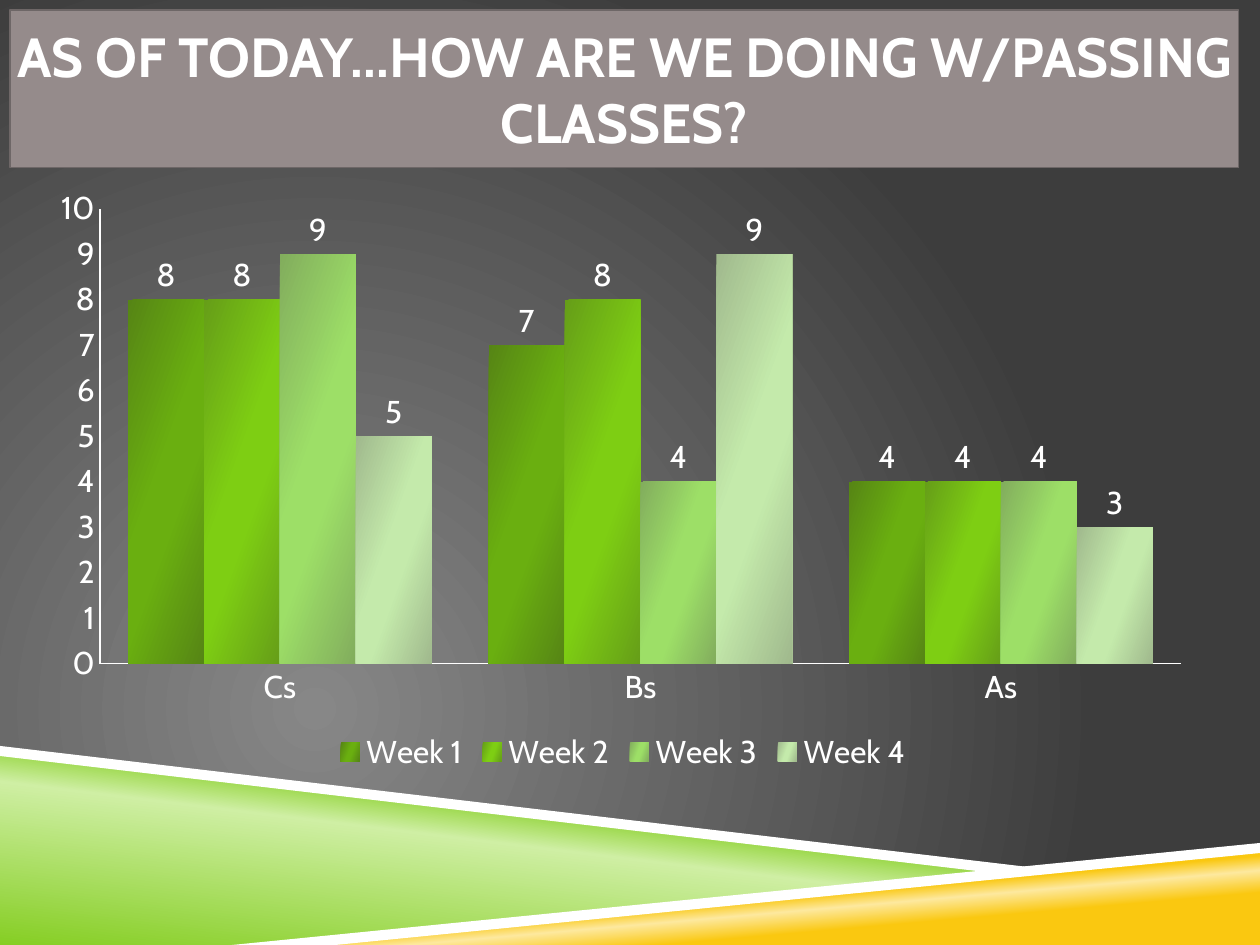
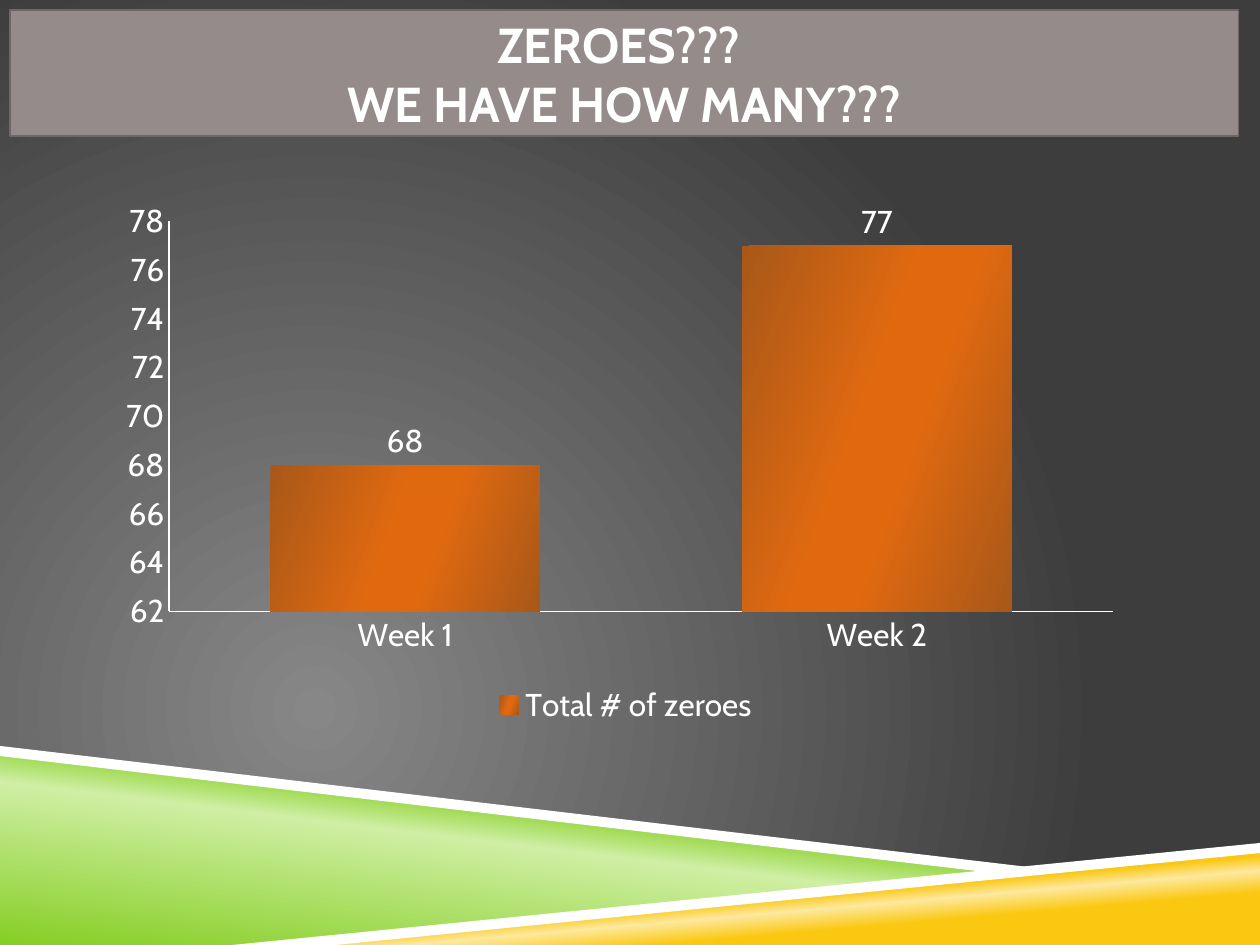
"""Build two slides that report passing grades and zeroes by week."""
from lxml import etree
from pptx import Presentation
from pptx import util as u
from pptx.chart import data as chart_data
from pptx.dml import color
from pptx.enum import chart as charts, shapes, text
from pptx.oxml import ns

FONT = "Cabin"
WHITE = "FFFFFF"
TITLE_FILL, TITLE_LINE = "958B8B", "6E6767"
BACKGROUND = [(0, "878787"), (100, "3D3D3D")]
GREEN_BAND = [(0, "86CE24"), (52, "CFEFA4"), (66, "86CE24")]
GOLD_BAND = [(28, "FAC810"), (40, "FDE99F"), (48, "FAC810")]
GREENS = [("568515", "6AAF10"), ("669E18", "7ECE13"),
          ("82AD5D", "9DDF67"), ("A0B98D", "C4EAAB")]
ORANGE = [("A85819", "E06910")]


def rgb(value):
    """Turn a hex string into a colour."""
    return color.RGBColor.from_string(value)


def set_gradient(fill, owner, stops, angle=None):
    """Apply a linear gradient, or a circular one when no angle is given."""
    fill.gradient()
    gradient = owner.find(".//" + ns.qn("a:gradFill"))
    for child in list(gradient):
        gradient.remove(child)
    stop_list = etree.SubElement(gradient, ns.qn("a:gsLst"))
    for position, value in stops:
        stop = etree.SubElement(stop_list, ns.qn("a:gs"), pos=str(position * 1000))
        etree.SubElement(stop, ns.qn("a:srgbClr"), val=value)
    if angle is None:
        circle = etree.SubElement(gradient, ns.qn("a:path"), path="circle")
        etree.SubElement(circle, ns.qn("a:fillToRect"),
                         l="50000", t="100000", r="100000", b="50000")
    else:
        etree.SubElement(gradient, ns.qn("a:lin"), ang=str(angle * 60000), scaled="0")


def add_band(slide, points):
    """Draw a borderless polygon through points given in inches."""
    corners = [(u.Inches(x), u.Inches(y)) for x, y in points]
    builder = slide.shapes.build_freeform(*corners[0], scale=1.0)
    builder.add_line_segments(corners[1:], close=True)
    band = builder.convert_to_shape()
    band.shadow.inherit = False
    band.line.fill.background()
    return band


def add_base_slide(presentation):
    """Add a blank slide with the shared background and bottom bands."""
    slide = presentation.slides.add_slide(presentation.slide_layouts[6])
    set_gradient(slide.background.fill, slide.element, BACKGROUND)
    green = add_band(slide, [(0, 5.97), (7.92, 6.92), (2, 7.5), (0, 7.5)])
    set_gradient(green.fill, green.element, GREEN_BAND, 277)
    gold = add_band(slide, [(1.98, 7.5), (10, 6.72), (10, 7.5)])
    set_gradient(gold.fill, gold.element, GOLD_BAND, 265)
    for points in ([(0, 5.92), (0, 6), (7.9, 6.93), (8.32, 6.9)],
                   [(10, 6.69), (1.84, 7.5), (2.66, 7.5), (10, 6.77)]):
        stripe = add_band(slide, points)
        stripe.fill.solid()
        stripe.fill.fore_color.rgb = rgb(WHITE)
    return slide


def add_title(slide, lines, height, size, side_inset):
    """Add the title box with one paragraph for each line."""
    box = slide.shapes.add_shape(shapes.MSO_SHAPE.RECTANGLE, u.Inches(0.08),
                                 u.Inches(0.08), u.Inches(9.75), u.Inches(height))
    box.shadow.inherit = False
    box.fill.solid()
    box.fill.fore_color.rgb = rgb(TITLE_FILL)
    box.line.color.rgb = rgb(TITLE_LINE)
    box.line.width = u.Pt(1)
    frame = box.text_frame
    frame.word_wrap = True
    frame.vertical_anchor = text.MSO_ANCHOR.MIDDLE
    frame.margin_left = frame.margin_right = u.Inches(side_inset)
    frame.text = "\n".join(lines)
    for paragraph in frame.paragraphs:
        paragraph.alignment = text.PP_ALIGN.CENTER
        style_font(paragraph.font, size)
        paragraph.font.bold = True


def style_font(font, size):
    """Set the shared typeface and colour at a size."""
    font.name = FONT
    font.size = u.Pt(size)
    font.color.rgb = rgb(WHITE)


def style_axis(axis):
    """Give an axis a white line without ticks or gridlines."""
    axis.has_major_gridlines = False
    axis.major_tick_mark = axis.minor_tick_mark = charts.XL_TICK_MARK.NONE
    axis.format.line.color.rgb = rgb(WHITE)
    axis.format.line.width = u.Pt(1)


def set_plot_layout(chart, layout):
    """Fix the inner plot area as fractions of the chart."""
    area = chart.element.find(".//" + ns.qn("c:plotArea"))
    for old in area.findall(ns.qn("c:layout")):
        area.remove(old)
    holder = etree.Element(ns.qn("c:layout"))
    area.insert(0, holder)
    manual = etree.SubElement(holder, ns.qn("c:manualLayout"))
    settings = [("layoutTarget", "inner"), ("xMode", "edge"), ("yMode", "edge")]
    for name, value in settings + list(zip("xywh", layout)):
        etree.SubElement(manual, ns.qn("c:" + name), val=str(value))


def add_column_chart(slide, place, categories, series_values, colours, scale, layout):
    """Add a clustered column chart with value labels and a bottom legend."""
    data = chart_data.CategoryChartData()
    data.categories = categories
    for name, values in series_values.items():
        data.add_series(name, values)
    chart = slide.shapes.add_chart(charts.XL_CHART_TYPE.COLUMN_CLUSTERED,
                                   *map(u.Inches, place), data).chart
    style_font(chart.font, 18)
    chart.has_title = False
    chart.has_legend = True
    chart.legend.position = charts.XL_LEGEND_POSITION.BOTTOM
    chart.legend.include_in_layout = False
    style_axis(chart.category_axis)
    axis = chart.value_axis
    style_axis(axis)
    axis.minimum_scale, axis.maximum_scale, axis.major_unit = scale
    plot = chart.plots[0]
    plot.gap_width = 75
    plot.overlap = 0
    plot.vary_by_categories = False
    plot.has_data_labels = True
    plot.data_labels.show_value = True
    plot.data_labels.position = charts.XL_LABEL_POSITION.OUTSIDE_END
    for series, (edge, middle) in zip(plot.series, colours):
        stops = [(0, edge), (45, middle), (60, middle), (100, edge)]
        set_gradient(series.format.fill, series._element, stops, 20)
    set_plot_layout(chart, layout)


def main():
    """Build and save the presentation."""
    presentation = Presentation()
    presentation.slide_width = u.Inches(10)
    presentation.slide_height = u.Inches(7.5)

    passing = add_base_slide(presentation)
    add_title(passing, ["AS OF TODAY…HOW ARE WE DOING W/PASSING CLASSES?"], 1.25, 31.5, 0)
    grades = {"Week 1": (8, 7, 4), "Week 2": (8, 8, 4),
              "Week 3": (9, 4, 4), "Week 4": (5, 9, 3)}
    add_column_chart(passing, (0.33, 1.42, 9.23, 4.75), ["Cs", "Bs", "As"], grades,
                     GREENS, (0, 10, 1), (0.05, 0.05, 0.93, 0.76))

    zeroes = add_base_slide(presentation)
    add_column_chart(zeroes, (0.85, 1.5, 8.23, 4.3), ["Week 1", "Week 2"],
                     {"Total # of zeroes": (68, 77)}, ORANGE, (62, 78, 2),
                     (0.06, 0.06, 0.91, 0.72))
    add_title(zeroes, ["ZEROES??? ", "WE HAVE HOW MANY???"], 1, 28, 0.1)

    presentation.save("out.pptx")


if __name__ == "__main__":
    main()
